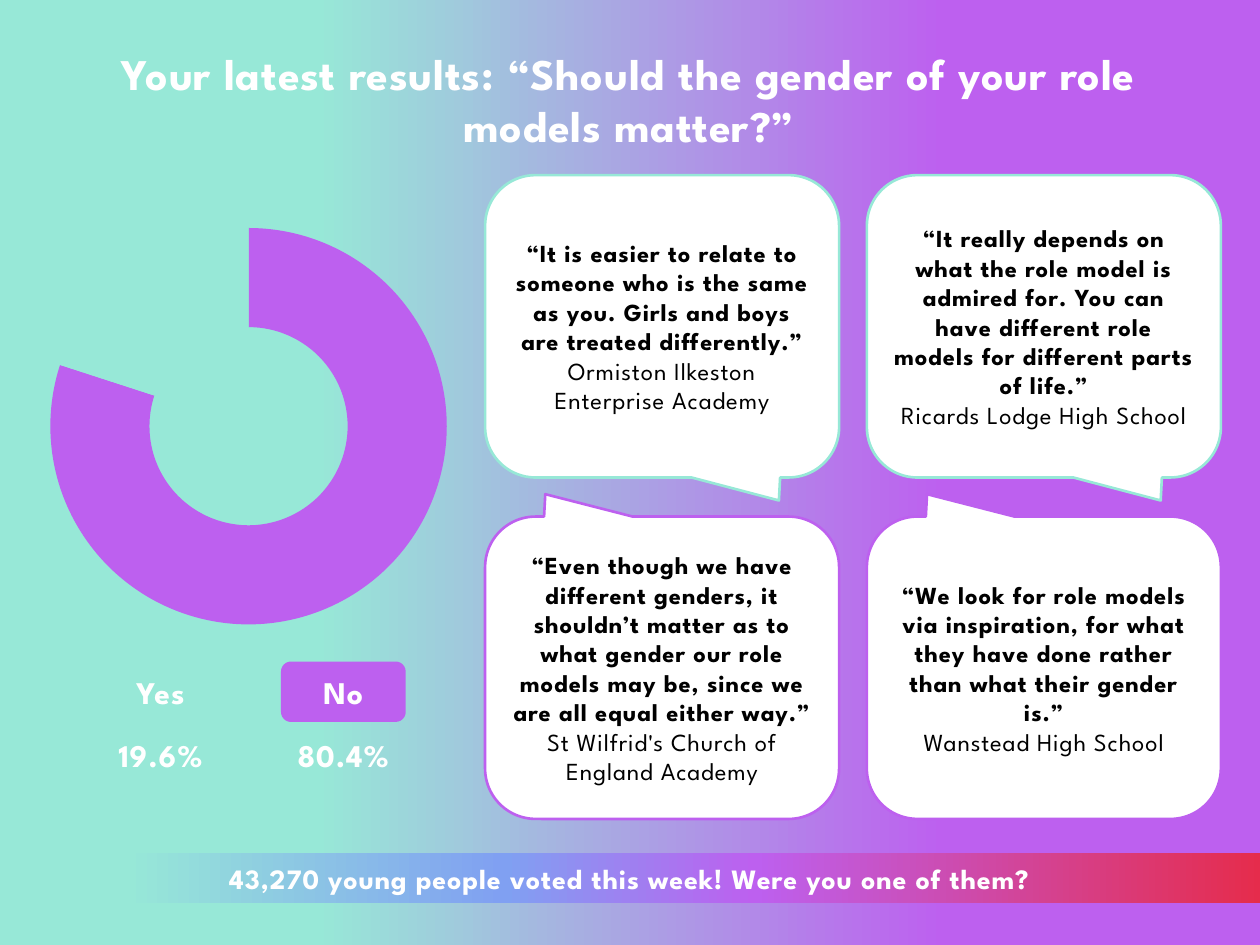
from copy import deepcopy

from lxml.etree import SubElement
from pptx import Presentation
from pptx.chart.data import CategoryChartData
from pptx.dml.color import RGBColor
from pptx.enum.chart import XL_CHART_TYPE
from pptx.enum.shapes import MSO_SHAPE
from pptx.enum.text import MSO_ANCHOR, PP_ALIGN
from pptx.oxml.ns import qn
from pptx.util import Inches, Pt

FONT = "League Spartan"
MINT, PURPLE, WHITE, BLACK = "97E8D7", "BD60EF", "FFFFFF", "000000"


def rgb(code):
    return RGBColor.from_string(code)


def write(frame, *lines, size=18, color=WHITE, anchor=MSO_ANCHOR.MIDDLE, bold_lines=1):
    """Fill a text frame with centred lines; the first bold_lines are bold."""
    frame.word_wrap = True
    frame.vertical_anchor = anchor
    for i, line in enumerate(lines):
        paragraph = frame.paragraphs[0] if i == 0 else frame.add_paragraph()
        paragraph.alignment = PP_ALIGN.CENTER
        run = paragraph.add_run()
        run.text = line
        run.font.name = FONT
        run.font.size = Pt(size)
        run.font.bold = i < bold_lines
        run.font.color.rgb = rgb(color)
        run.font._element.set("spc", "50")


prs = Presentation()
prs.slide_width, prs.slide_height = Inches(10), Inches(7.5)
slide = prs.slides.add_slide(prs.slide_layouts[6])
shapes = slide.shapes

# Fine grid: 1000 columns by 750 rows
col = prs.slide_width // 1000
row = prs.slide_height // 750

# Background fading from mint to purple
backdrop = slide.background.fill
backdrop.gradient()
backdrop.gradient_angle = 0
for stop, position, color in zip(backdrop.gradient_stops, (0.25, 0.75), (MINT, PURPLE)):
    stop.position = position
    stop.color.rgb = rgb(color)

# Answers with their shares of the vote
answers = [("Yes", "19.6%", MINT), ("No", "80.4%", PURPLE)]
for i, (answer, share, color) in enumerate(answers):
    left = 71 + 145 * i
    percent = shapes.add_textbox(left * col, 579 * row, 113 * col, 40 * row)
    write(percent.text_frame, share)
    badge = shapes.add_shape(MSO_SHAPE.ROUNDED_RECTANGLE,
                             (left + 7) * col, 525 * row, 99 * col, 48 * row)
    badge.shadow.inherit = False
    badge.fill.solid()
    badge.fill.fore_color.rgb = rgb(color)
    badge.line.fill.background()
    write(badge.text_frame, answer)

# Doughnut of the votes
votes = CategoryChartData()
votes.categories = ["1", "2"]
votes.add_series("Series 1", (80, 20))
doughnut = shapes.add_chart(XL_CHART_TYPE.DOUGHNUT, -96 * col, 130 * row,
                            586 * col, 398 * row, votes).chart
doughnut.has_title = False
doughnut.has_legend = False
doughnut.font.name = FONT
doughnut.font.size = Pt(10)
doughnut.font.color.rgb = rgb(BLACK)
ring = doughnut.plots[0]
ring.vary_by_categories = True
for i, color in enumerate((PURPLE, MINT)):
    slice_format = ring.series[0].points[i].format
    slice_format.fill.solid()
    slice_format.fill.fore_color.rgb = rgb(color)
    slice_format.line.fill.background()

# Fixed place of the ring inside its frame
plot_area = doughnut.element.xpath(".//c:plotArea")[0]
for old in plot_area.findall(qn("c:layout")):
    plot_area.remove(old)
layout = SubElement(plot_area, qn("c:layout"))
plot_area.insert(0, layout)
manual = SubElement(layout, qn("c:manualLayout"))
for tag, value in [("layoutTarget", "inner"), ("xMode", "edge"), ("yMode", "edge"),
                   ("x", "0.232"), ("y", "0.128"), ("w", "0.537"), ("h", "0.791")]:
    SubElement(manual, qn(f"c:{tag}")).set("val", value)

# Quotes in speech bubbles, two by two
quotes = [
    ("“It is easier to relate to someone who is the same as you. Girls and boys "
     "are treated differently.”", "Ormiston Ilkeston Enterprise Academy"),
    ("“It really depends on what the role model is admired for. You can have "
     "different role models for different parts of life.”", "Ricards Lodge High School"),
    ("“Even though we have different genders, it shouldn’t matter as to what gender "
     "our role models may be, since we are all equal either way.”",
     "St Wilfrid's Church of England Academy"),
    ("“We look for role models via inspiration, for what they have done rather than "
     "what their gender is.”", "Wanstead High School"),
]
for i, (quote, school) in enumerate(quotes):
    lower, right = divmod(i, 2)
    bubble = shapes.add_shape(MSO_SHAPE.ROUNDED_RECTANGULAR_CALLOUT,
                              (385 + 303 * right) * col, (139 + 271 * lower) * row,
                              281 * col, 240 * row)
    bubble.adjustments[0] = 0.33
    bubble.adjustments[1] = -0.574 if lower else 0.576
    bubble.adjustments[2] = 0.167
    if lower:
        bubble.element.spPr.find(qn("a:xfrm")).set("flipH", "1")
    bubble.shadow.inherit = False
    bubble.fill.solid()
    bubble.fill.fore_color.rgb = rgb(WHITE)
    bubble.line.color.rgb = rgb(PURPLE if lower else MINT)
    bubble.line.width = Pt(1.5)
    frame = bubble.text_frame
    frame.margin_left = frame.margin_right = frame.margin_top = frame.margin_bottom = 10 * col
    write(frame, quote, school, size=14, color=BLACK)

# Turnout banner with a four-colour gradient
banner = shapes.add_shape(MSO_SHAPE.RECTANGLE, 0, 677 * row, 1000 * col, 40 * row)
banner.shadow.inherit = False
banner.line.fill.background()
banner.fill.gradient()
banner.fill.gradient_angle = 0
stop_list = banner.element.xpath(".//a:gsLst")[0]
for extra_stop in list(stop_list):
    stop_list.append(deepcopy(extra_stop))
banner_stops = [(0.1, MINT), (0.4, "80A0F2"), (0.6, PURPLE), (1, "E52C4C")]
for stop, (position, color) in zip(banner.fill.gradient_stops, banner_stops):
    stop.position = position
    stop.color.rgb = rgb(color)
write(banner.text_frame, "43,270 young people voted this week! Were you one of them?", size=16)

# Title
title = shapes.add_textbox(31 * col, 32 * row, 937 * col, 94 * row)
write(title.text_frame, "Your latest results: “Should the gender of your role models matter?”",
      size=25, anchor=MSO_ANCHOR.TOP)

prs.save("out.pptx")
